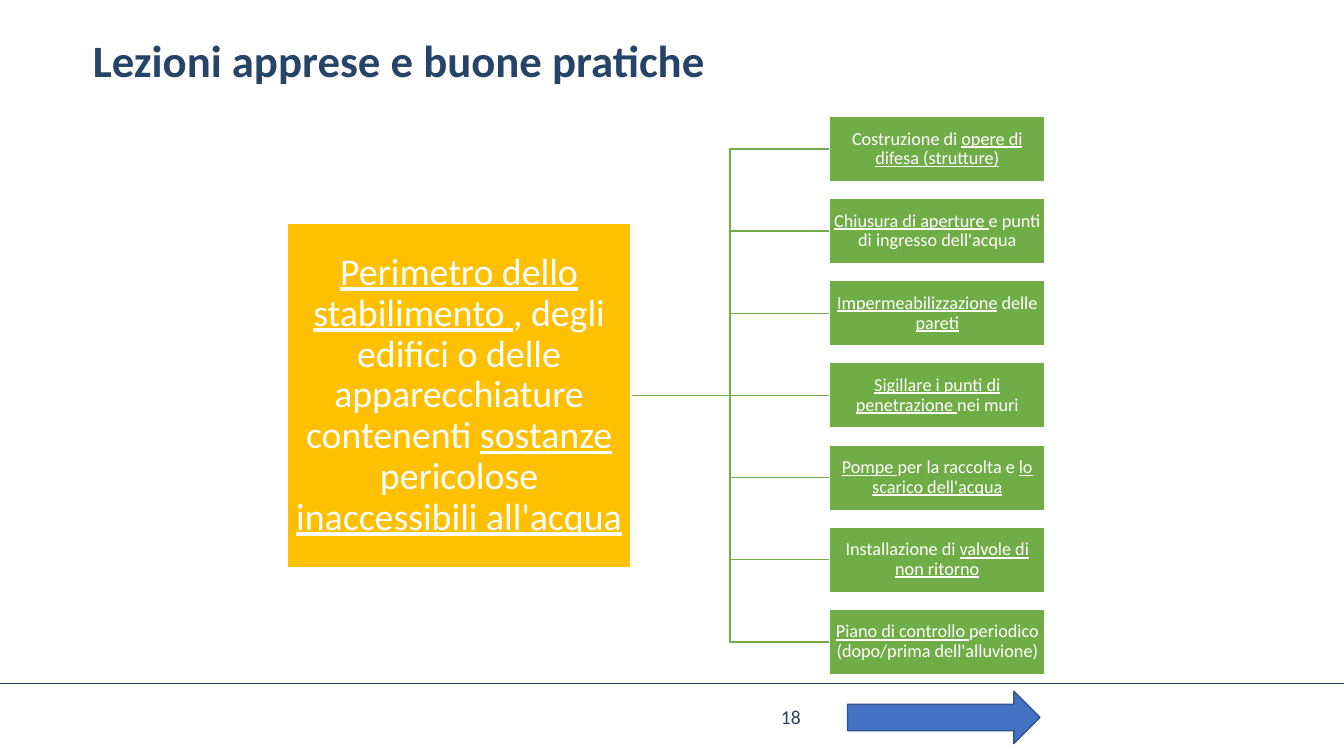
from lxml.etree import SubElement
from pptx import Presentation
from pptx.dml.color import RGBColor
from pptx.enum.shapes import MSO_CONNECTOR as Connector, MSO_SHAPE as Shape
from pptx.enum.text import MSO_ANCHOR as Anchor, PP_ALIGN as Align
from pptx.oxml.ns import qn
from pptx.util import Cm, Pt

NAVY = RGBColor(0x26, 0x43, 0x68)
GOLD = RGBColor(0xFF, 0xC0, 0x00)
GREEN = RGBColor(0x70, 0xAD, 0x47)
BLUE = RGBColor(0x44, 0x72, 0xC4)
DARK_BLUE = RGBColor(0x32, 0x54, 0x91)
WHITE = RGBColor(0xFF, 0xFF, 0xFF)

PERIMETER = (
    "_Perimetro dello stabilimento _, degli edifici o delle apparecchiature "
    "contenenti _sostanze_ pericolose _inaccessibili all'acqua_"
)
MEASURES = [
    "Costruzione di _opere di difesa (strutture)_",
    "_Chiusura di aperture _e punti di ingresso dell'acqua",
    "_Impermeabilizzazione_ delle _pareti_",
    "_Sigillare i punti di penetrazione _nei muri",
    "_Pompe _per la raccolta e _lo scarico dell'acqua_",
    "Installazione di _valvole di non ritorno_",
    "_Piano di controllo _periodico (dopo/prima dell'alluvione)",
]

ROOT_LEFT, ROOT_TOP, ROOT_SIDE = 7.24, 5.64, 8.66
TRUNK = 18.4
LEAF_LEFT, LEAF_TOP, LEAF_WIDTH, LEAF_HEIGHT = 20.9, 2.93, 5.44, 1.65
LEAF_STEP = 2.07


def write(box, text, size=14, color=WHITE, bold=None, align=Align.LEFT,
          anchor=Anchor.TOP, spacing=1.0, inset=None):
    frame = box.text_frame
    frame.word_wrap = True
    frame.vertical_anchor = anchor
    if inset is not None:
        frame.margin_left = frame.margin_right = Cm(inset)
        frame.margin_top = frame.margin_bottom = Cm(inset)
    para = frame.paragraphs[0]
    para.alignment = align
    para.line_spacing = spacing
    for index, part in enumerate(text.split("_")):
        if part:
            span = para.add_run()
            span.text = part
            font = span.font
            font.name, font.size, font.bold = "Calibri", Pt(size), bold
            font.underline = index % 2 == 1
            font.color.rgb = color


class Page:
    line_width = Pt(1)

    def __init__(self, deck):
        self.slide = deck.slides.add_slide(deck.slide_layouts[5])
        self.shapes = self.slide.shapes

    def title(self, text, left, top, width, height):
        box = self.shapes.title
        box.left, box.top, box.width, box.height = map(Cm, (left, top, width, height))
        write(box, text, size=32, color=NAVY, bold=True, spacing=0.9, inset=0)

    def label(self, text, left, top, width, height):
        box = self.shapes.add_textbox(*map(Cm, (left, top, width, height)))
        write(box, text, color=NAVY)

    def rule(self, top, width):
        line = self.shapes.add_connector(
            Connector.STRAIGHT, Cm(0), Cm(top), Cm(width), Cm(top))
        line.line.color.rgb = NAVY
        line.line.width = self.line_width
        SubElement(line._element.spPr, qn("a:effectLst"))

    def block(self, kind, left, top, width, height, fill, outline=WHITE):
        box = self.shapes.add_shape(kind, *map(Cm, (left, top, width, height)))
        box.shadow.inherit = False
        box.fill.solid()
        box.fill.fore_color.rgb = fill
        box.line.color.rgb = outline
        box.line.width = self.line_width
        return box

    def branch(self, points):
        start, *rest = [(Cm(x), Cm(y)) for x, y in points]
        builder = self.shapes.build_freeform(*start)
        builder.add_line_segments(rest, close=False)
        elbow = builder.convert_to_shape()
        elbow.shadow.inherit = False
        elbow.fill.background()
        elbow.line.color.rgb = GREEN
        elbow.line.width = self.line_width


def main():
    deck = Presentation()
    deck.slide_width, deck.slide_height = Cm(33.87), Cm(19.05)
    page = Page(deck)
    page.rule(17.22, 33.87)
    page.title("Lezioni apprese e buone pratiche", 2.34, 0.97, 30.12, 1.75)
    page.label("18", 19.43, 17.65, 7.62, 1.02)

    tops = [LEAF_TOP + LEAF_STEP * index for index in range(len(MEASURES))]
    root_right, root_middle = ROOT_LEFT + ROOT_SIDE, ROOT_TOP + ROOT_SIDE / 2
    for top in reversed(tops):
        middle = top + LEAF_HEIGHT / 2
        page.branch([(root_right, root_middle), (TRUNK, root_middle),
                     (TRUNK, middle), (LEAF_LEFT, middle)])

    root = page.block(Shape.RECTANGLE, ROOT_LEFT, ROOT_TOP, ROOT_SIDE, ROOT_SIDE, GOLD)
    write(root, PERIMETER, size=27, align=Align.CENTER, anchor=Anchor.MIDDLE,
          spacing=0.9, inset=0.05)
    for top, measure in zip(tops, MEASURES):
        leaf = page.block(Shape.RECTANGLE, LEAF_LEFT, top, LEAF_WIDTH, LEAF_HEIGHT, GREEN)
        write(leaf, measure, size=13, align=Align.CENTER, anchor=Anchor.MIDDLE,
              spacing=0.9, inset=0.02)

    page.block(Shape.RIGHT_ARROW, 21.36, 17.42, 4.85, 1.32, BLUE, DARK_BLUE)
    deck.save("out.pptx")


if __name__ == "__main__":
    main()
